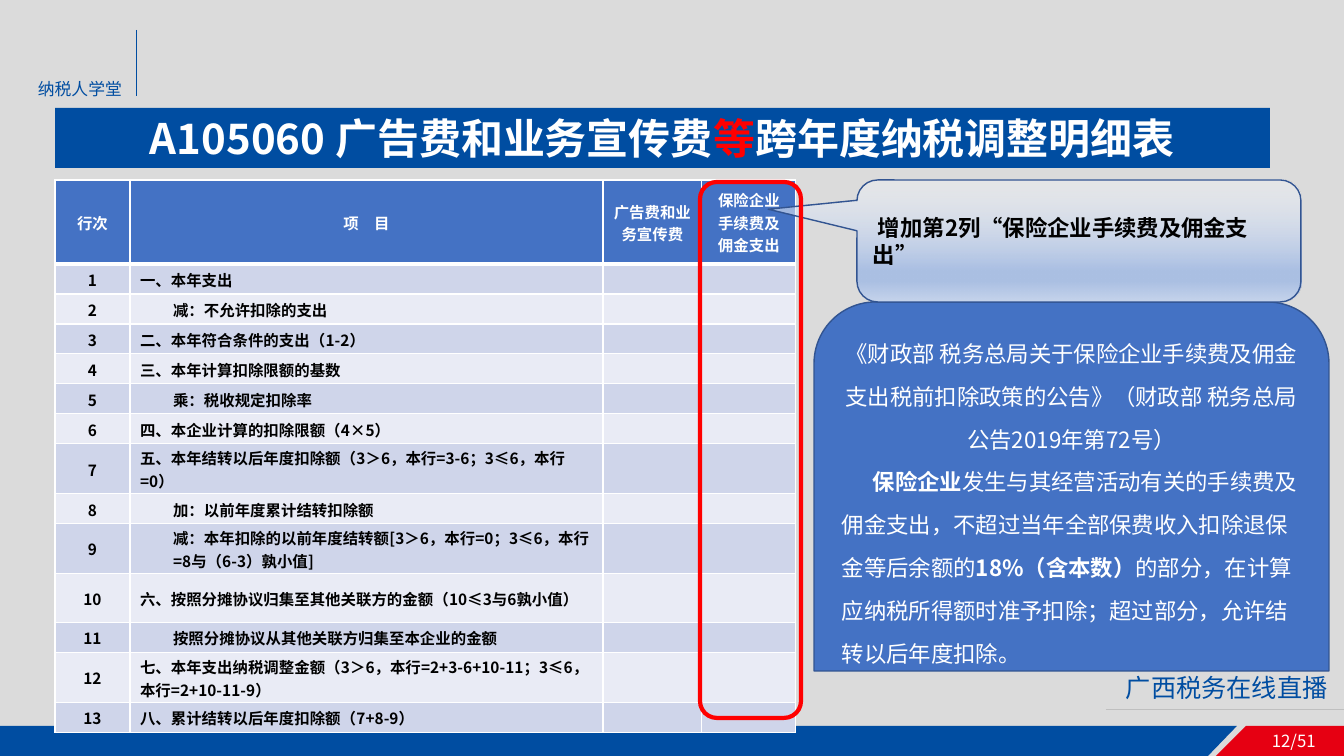
"""Build the slide on the A105060 cross-year advertising expense adjustment table."""
from dataclasses import dataclass, field
from typing import Any, NamedTuple, Optional

from lxml.etree import SubElement
from pptx import Presentation
from pptx.dml.color import RGBColor
from pptx.enum.shapes import MSO_CONNECTOR as Link, MSO_SHAPE as Preset
from pptx.enum.text import MSO_ANCHOR as Anchor, MSO_AUTO_SIZE as Fit, PP_ALIGN as Align
from pptx.oxml.ns import qn
from pptx.util import Pt

EMU_PER_INCH, PX_PER_INCH = 914400, 100.8


@dataclass(frozen=True)
class Theme:
    font: str = "Noto Sans CJK SC"
    page: str = "DBDBDB"
    brand: str = "004DA1"
    accent: str = "E60012"
    alert: str = "FF0000"
    panel: str = "4472C4"
    edge: str = "325491"
    rule: str = "BFBFBF"
    white: str = "FFFFFF"
    black: str = "000000"
    bands: tuple[str, str] = ("CFD5EA", "E9EBF5")
    title: int = 30
    label: int = 18
    body: int = 16
    small: int = 12
    cell: int = 11


THEME = Theme()


class Box(NamedTuple):
    left: int
    top: int
    width: int
    height: int


class Span(NamedTuple):
    text: str
    bold: bool = False
    color: Optional[str] = None


class Para(NamedTuple):
    spans: list[Span]
    align: Align = Align.LEFT
    spacing: float = 1.0
    margin: int = 0
    indent: int = 0


class Label(NamedTuple):
    text: str
    box: Box
    size: int
    color: str


class Rule(NamedTuple):
    start: tuple[int, int]
    end: tuple[int, int]
    color: str


class Strip(NamedTuple):
    points: list[tuple[int, int]]
    color: str


class Row(NamedTuple):
    text: str
    height: int = 30
    margin: int = 0


@dataclass
class Panel:
    preset: Preset
    box: Box
    line: str
    weight: int = 1
    fill: Optional[str] = None
    stops: list[tuple[int, str, int]] = field(default_factory=list)
    adjust: tuple[float, ...] = ()
    paras: list[Para] = field(default_factory=list)
    color: str = THEME.white


STRIPS = [
    Strip([(0, 726), (1237, 726), (1208, 756), (0, 756)], THEME.brand),
    Strip([(1246, 726), (1344, 726), (1344, 756), (1216, 756)], THEME.accent),
]
RULES = [
    Rule((136, 30), (136, 96), THEME.brand),
    Rule((1106, 709), (1344, 709), THEME.rule),
]
LABELS = [
    Label("12/51", Box(1262, 726, 72, 30), THEME.small, THEME.white),
    Label("纳税人学堂", Box(28, 74, 109, 30), THEME.small, THEME.brand),
    Label("广西税务在线直播", Box(1116, 667, 228, 40), THEME.label, THEME.brand),
]
TITLE = Para([Span("A105060 广告费和业务宣传费", True), Span("等", True, THEME.alert),
              Span("跨年度纳税调整明细表", True)], Align.CENTER)
COLUMNS = [75, 473, 99, 94]
HEADER = ["行次", "项　目", "广告费和业务宣传费", "保险企业手续费及佣金支出"]
HEADER_HEIGHT = 84
ROWS = [
    Row("一、本年支出"),
    Row("减：不允许扣除的支出", margin=33),
    Row("二、本年符合条件的支出（1-2）"),
    Row("三、本年计算扣除限额的基数"),
    Row("乘：税收规定扣除率", margin=33),
    Row("四、本企业计算的扣除限额（4×5）"),
    Row("五、本年结转以后年度扣除额（3＞6，本行=3-6；3≤6，本行=0）", 50),
    Row("加：以前年度累计结转扣除额", margin=33),
    Row("减：本年扣除的以前年度结转额[3＞6，本行=0；3≤6，本行=8与（6-3）孰小值]", 50, 33),
    Row("六、按照分摊协议归集至其他关联方的金额（10≤3与6孰小值）", 49),
    Row("按照分摊协议从其他关联方归集至本企业的金额", margin=33),
    Row("七、本年支出纳税调整金额（3＞6，本行=2+3-6+10-11；3≤6，本行=2+10-11-9）", 50),
    Row("八、累计结转以后年度扣除额（7+8-9）"),
]
PANELS = [
    Panel(Preset.ROUND_2_SAME_RECTANGLE, Box(814, 302, 515, 369), THEME.edge, fill=THEME.panel, paras=[
        Para([Span("《财政部 税务总局关于保险企业手续费及佣金支出税前扣除政策的公告》"
                   "（财政部 税务总局公告2019年第72号）")], Align.CENTER, 1.6),
        Para([Span("保险企业", True),
              Span("发生与其经营活动有关的手续费及佣金支出，不超过当年全部保费收入扣除退保金等后余额的"),
              Span("18%（含本数）", True),
              Span("的部分，在计算应纳税所得额时准予扣除；超过部分，允许结转以后年度扣除。")],
             spacing=1.6, indent=31)]),
    Panel(Preset.ROUNDED_RECTANGULAR_CALLOUT, Box(857, 180, 444, 122), THEME.edge,
          stops=[(0, "F6F8FC", 39), (74, "ABC0E4", 100), (83, "ABC0E4", 100), (100, "C7D5ED", 100)],
          adjust=(-0.7, -0.26, 0.17), color=THEME.black,
          paras=[Para([Span(" 增加第2列“保险企业手续费及佣金支出”", True)])]),
    Panel(Preset.ROUNDED_RECTANGLE, Box(700, 182, 101, 536), THEME.alert, 3),
]


def emu(px: int) -> int:
    """Turn whole pixels into EMU."""
    return round(px * EMU_PER_INCH / PX_PER_INCH)


def place(box: Box) -> list[int]:
    """Turn a pixel box into EMU lengths."""
    return [emu(length) for length in box]


def apply(target: Any, values: dict[str, Any]) -> None:
    """Set each named attribute on the target."""
    for name, value in values.items():
        setattr(target, name, value)


def paint(fill: Any, color: str) -> None:
    """Give a fill one solid colour."""
    fill.solid()
    fill.fore_color.rgb = RGBColor.from_string(color)


def write(frame: Any, paras: list[Para], size: int, color: str) -> None:
    """Write formatted paragraphs into a text frame."""
    for index, item in enumerate(paras):
        para = frame.add_paragraph() if index else frame.paragraphs[0]
        apply(para, {"alignment": item.align, "line_spacing": item.spacing})
        for name, length in {"marL": item.margin, "indent": item.indent}.items():
            para._p.get_or_add_pPr().set(name, str(emu(length)))
        for span in item.spans:
            run = para.add_run()
            run.text = span.text
            apply(run.font, {"name": THEME.font, "size": Pt(size), "bold": span.bold})
            run.font.color.rgb = RGBColor.from_string(span.color or color)
            SubElement(run._r.get_or_add_rPr(), qn("a:ea"), typeface=THEME.font)


def draw_strip(page: Any, strip: Strip) -> None:
    """Draw one slanted footer strip."""
    start, *rest = [(emu(x), emu(y)) for x, y in strip.points]
    builder = page.shapes.build_freeform(*start)
    builder.add_line_segments(rest)
    shape = builder.convert_to_shape()
    shape.shadow.inherit = False
    paint(shape.fill, strip.color)
    shape.line.fill.background()


def draw_rule(page: Any, rule: Rule) -> None:
    """Draw one thin straight line."""
    line = page.shapes.add_connector(Link.STRAIGHT, *map(emu, rule.start + rule.end))
    paint(line.line.fill, rule.color)
    line.line.width = Pt(0.5)
    SubElement(line._element.spPr, qn("a:effectLst"))


def draw_label(page: Any, label: Label) -> None:
    """Draw one line of free text."""
    frame = page.shapes.add_textbox(*place(label.box)).text_frame
    apply(frame, {"word_wrap": True, "vertical_anchor": Anchor.MIDDLE})
    write(frame, [Para([Span(label.text)])], label.size, label.color)


def draw_title(page: Any) -> None:
    """Move and format the title placeholder."""
    title = page.shapes.title
    apply(title, dict(zip(Box._fields, place(Box(55, 108, 1215, 60)))))
    paint(title.fill, THEME.brand)
    apply(title.text_frame, {"margin_top": 0, "margin_bottom": 0, "word_wrap": True,
                             "auto_size": Fit.NONE, "vertical_anchor": Anchor.MIDDLE})
    write(title.text_frame, [TITLE], THEME.title, THEME.white)


def fill_cell(cell: Any, para: Para, color: str, fill: str, base: int) -> None:
    """Write one table cell with borders and fill."""
    apply(cell, {"margin_top": emu(2), "margin_bottom": emu(1), "vertical_anchor": Anchor.MIDDLE})
    for side, weight in {"L": 1, "R": 1, "T": 1, "B": base}.items():
        border = SubElement(cell._tc.get_or_add_tcPr(), qn(f"a:ln{side}"), w=str(Pt(weight)))
        SubElement(SubElement(border, qn("a:solidFill")), qn("a:srgbClr"), val=THEME.white)
    paint(cell.fill, fill)
    if para.spans:
        write(cell.text_frame, [para], THEME.cell, color)
    else:
        SubElement(cell.text_frame.paragraphs[0]._p, qn("a:endParaRPr"), sz=str(THEME.cell * 100))


def draw_table(page: Any) -> None:
    """Draw the adjustment table."""
    heights = [HEADER_HEIGHT] + [row.height for row in ROWS]
    box = Box(55, 180, sum(COLUMNS), sum(heights))
    table = page.shapes.add_table(len(heights), len(COLUMNS), *place(box)).table
    for column, width in zip(table.columns, COLUMNS):
        column.width = emu(width)
    for line, height in zip(table.rows, heights):
        line.height = emu(height)
    for index, text in enumerate(HEADER):
        fill_cell(table.cell(0, index), Para([Span(text, True)], Align.CENTER), THEME.white, THEME.panel, 3)
    for number, row in enumerate(ROWS, 1):
        paras = [Para([Span(str(number), True)], Align.CENTER),
                 Para([Span(row.text, True)], margin=row.margin), Para([]), Para([])]
        for index, para in enumerate(paras):
            fill_cell(table.cell(number, index), para, THEME.black, THEME.bands[(number - 1) % 2], 1)


def blend(shape: Any, stops: list[tuple[int, str, int]]) -> None:
    """Give a shape a downward gradient with its own stops."""
    shape.fill.gradient()
    gradient = shape._element.spPr.find(qn("a:gradFill"))
    for child in list(gradient):
        gradient.remove(child)
    listing = SubElement(gradient, qn("a:gsLst"))
    for position, color, alpha in stops:
        stop = SubElement(listing, qn("a:gs"), pos=str(position * 1000))
        tint = SubElement(stop, qn("a:srgbClr"), val=color)
        SubElement(tint, qn("a:alpha"), val=str(alpha * 1000))
    SubElement(gradient, qn("a:lin"), ang=str(90 * 60000), scaled="0")


def draw_panel(page: Any, panel: Panel) -> None:
    """Draw one outlined shape with its text."""
    shape = page.shapes.add_shape(panel.preset, *place(panel.box))
    shape.shadow.inherit = False
    for index, value in enumerate(panel.adjust):
        shape.adjustments[index] = value
    if panel.stops:
        blend(shape, panel.stops)
    elif panel.fill:
        paint(shape.fill, panel.fill)
    else:
        shape.fill.background()
    paint(shape.line.fill, panel.line)
    shape.line.width = Pt(panel.weight)
    apply(shape.text_frame, {"word_wrap": True, "vertical_anchor": Anchor.MIDDLE})
    write(shape.text_frame, panel.paras, THEME.body, panel.color)


def main() -> None:
    """Build and save the deck."""
    deck = Presentation()
    apply(deck, {"slide_width": emu(1344), "slide_height": emu(756)})
    page = deck.slides.add_slide(deck.slide_layouts.get_by_name("Title Only"))
    paint(page.background.fill, THEME.page)
    for draw, items in ((draw_strip, STRIPS), (draw_rule, RULES), (draw_label, LABELS)):
        for item in items:
            draw(page, item)
    draw_title(page)
    draw_table(page)
    for panel in PANELS:
        draw_panel(page, panel)
    deck.save("out.pptx")


if __name__ == "__main__":
    main()
